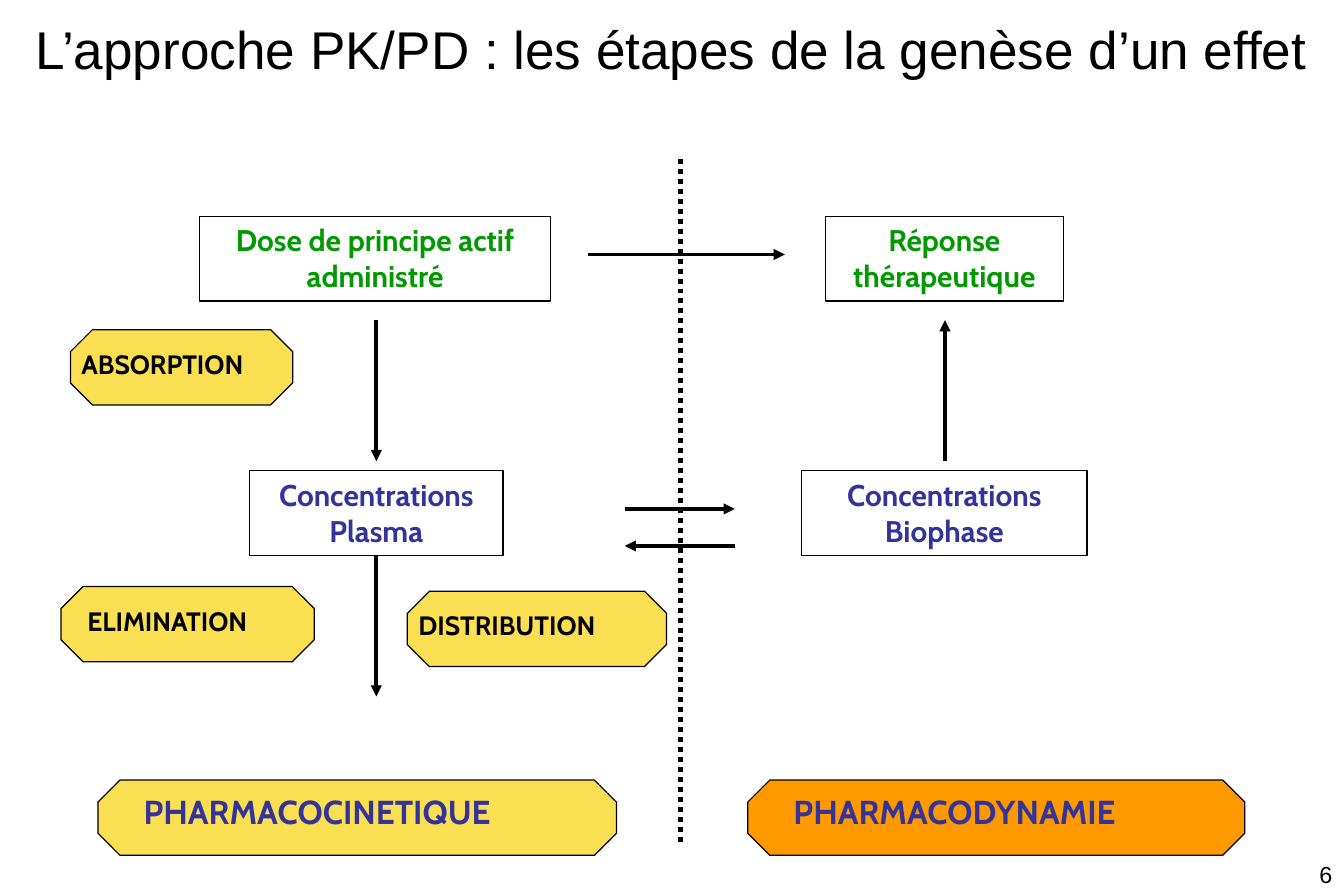
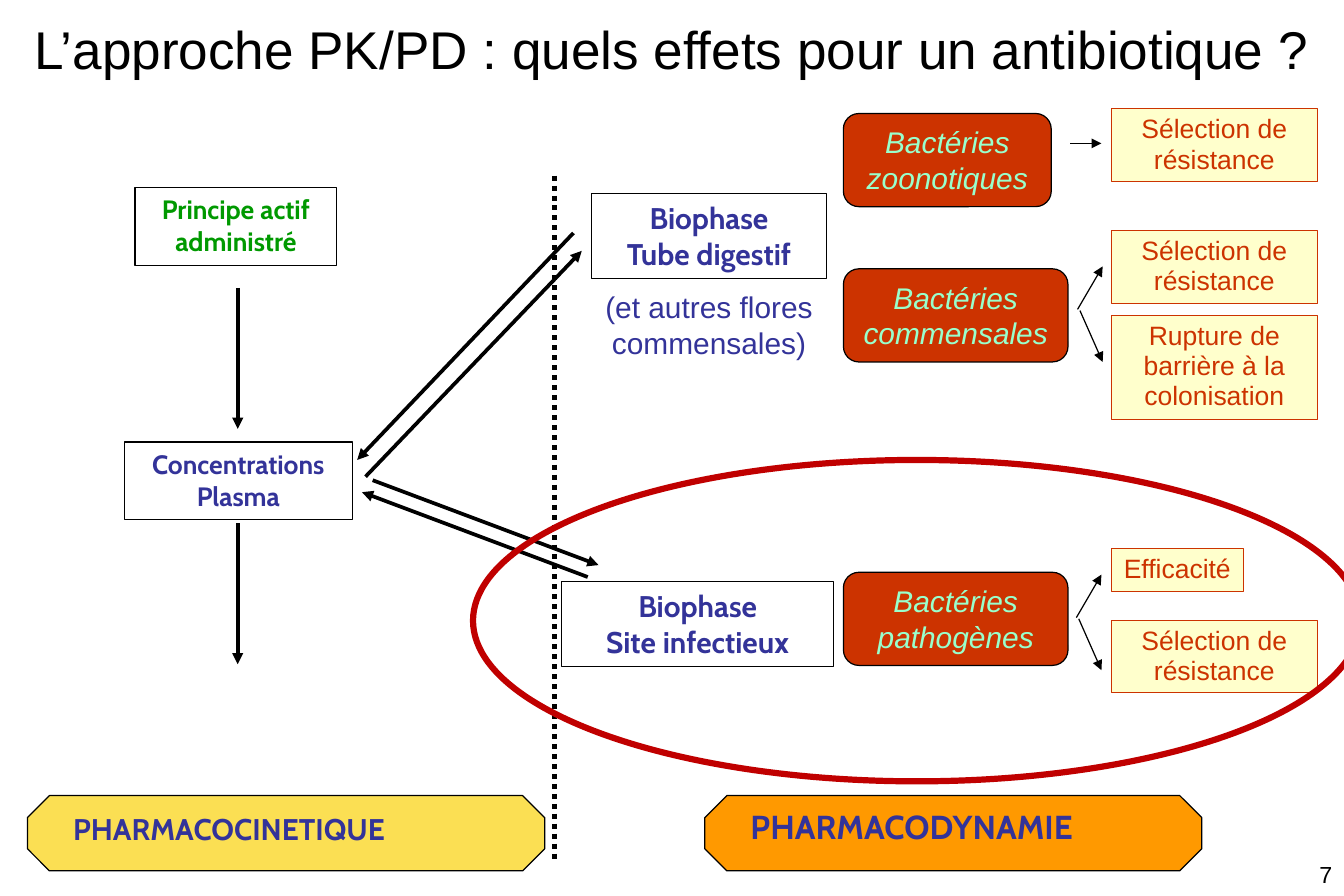
from pptx import Presentation
from pptx.dml.color import RGBColor
from pptx.enum.dml import MSO_LINE
from pptx.enum.shapes import MSO_CONNECTOR, MSO_SHAPE
from pptx.enum.text import MSO_ANCHOR, MSO_AUTO_SIZE, PP_ALIGN
from pptx.oxml.ns import qn
from pptx.util import Inches, Pt
from lxml import etree

W, H = 11.25, 7.5
BLACK, WHITE, BLUE, GREEN = "000000", "FFFFFF", "333399", "009900"
YELLOW, ORANGE, RED, DARK_RED = "FBDF53", "FF9900", "CC3300", "C00000"
TAG_H = 0.63                 # height of every octagon
DIVIDER_LEN = 5.75
RESULT_X, RESULT_W = 9.3, 1.73
BACTERIA_X = 7.06
THICK, THIN = 2.25, 0.75

# Text and shape styles
CABIN = dict(name="Cabin", bold=True)
ARIAL = dict(name="Arial")
STYLES = {
    "endpoint": dict(font={**CABIN, "size": 18}, color=GREEN),
    "site": dict(font={**CABIN, "size": 18}, color=BLUE, fill=WHITE),
    "note": dict(font={**ARIAL, "size": 18}, color=BLUE, line=None),
    "bacteria": dict(shape=MSO_SHAPE.ROUNDED_RECTANGLE, fill=RED,
                     font={**ARIAL, "size": 18, "italic": True}, color="99FFCC"),
    "result": dict(font={**ARIAL, "size": 16}, color=RED, fill="FFFFCC",
                   line=RED, weight=0.5, spacing=0.95),
    "step": dict(shape=MSO_SHAPE.OCTAGON, font={**CABIN, "size": 16},
                 color=BLACK, fill=YELLOW, align=PP_ALIGN.LEFT, top=0.06),
    "pk": dict(shape=MSO_SHAPE.OCTAGON, font={**CABIN, "size": 20}, color=BLUE,
               fill=YELLOW, align=PP_ALIGN.LEFT, side=0.29, top=0),
    "ring": dict(shape=MSO_SHAPE.OVAL, line=DARK_RED, weight=3.75),
}
STYLES["pd"] = {**STYLES["pk"], "fill": ORANGE}

# Content: boxes are (style, lines, left, top, width, height, overrides)
SMALL = dict(font={**CABIN, "size": 16})
SLIDES = [
    dict(
        title="L’approche PK/PD : les étapes de la genèse d’un effet",
        number="6", divider=(5.7, 1.33), plasma_exit=1.18,
        boxes=[
            ("pd", ["PHARMACODYNAMIE"], 6.26, 6.53, 4.16, TAG_H, {}),
            ("pk", ["PHARMACOCINETIQUE"], 0.82, 6.53, 4.34, TAG_H, {}),
            ("endpoint", ["Dose de principe actif", "administré"], 1.67, 1.81, 2.94, 0.71, {}),
            ("endpoint", ["Réponse", "thérapeutique"], 6.91, 1.81, 1.99, 0.71, {}),
            ("site", ["Concentrations", "Plasma"], 2.09, 3.94, 2.12, 0.71, {}),
            ("site", ["Concentrations", "Biophase"], 6.71, 3.94, 2.39, 0.71, {}),
            ("step", ["ABSORPTION"], 0.59, 2.76, 1.86, TAG_H, {}),
            ("step", ["ELIMINATION"], 0.51, 4.91, 2.12, TAG_H, dict(side=0.13)),
            ("step", ["DISTRIBUTION"], 3.41, 4.95, 2.17, TAG_H, {}),
        ],
        arrows=[
            (3.15, 2.68, 3.15, 3.86), (7.91, 3.86, 7.91, 2.68),
            (4.92, 2.13, 6.57, 2.13),
            (5.23, 4.26, 6.15, 4.26), (6.15, 4.57, 5.23, 4.57),
        ],
    ),
    dict(
        title="L’approche PK/PD : quels effets pour un antibiotique ?",
        number="7", divider=(4.64, 1.47),
        boxes=[
            ("pd", ["PHARMACODYNAMIE"], 5.9, 6.66, 4.16, TAG_H, {}),
            ("pk", ["PHARMACOCINETIQUE"], 0.23, 6.66, 4.33, TAG_H,
             dict(font={**CABIN, "size": 18}, top=0.03)),
            ("endpoint", ["Principe actif", "administré"], 1.13, 1.57, 1.69, 0.65, SMALL),
            ("site", ["Concentrations", "Plasma"], 1.04, 3.7, 1.91, 0.65, SMALL),
            ("site", ["Biophase", "Tube digestif"], 4.95, 1.62, 1.97, 0.71, {}),
            ("note", ["(et autres flores commensales)"], 4.95, 2.37, 1.97, 0.71, {}),
            ("site", ["Biophase", "Site infectieux"], 4.7, 4.87, 2.28, 0.71, {}),
            ("bacteria", ["Bactéries zoonotiques"], BACTERIA_X, 0.95, 1.74, 0.78, {}),
            ("bacteria", ["Bactéries commensales"], BACTERIA_X, 2.25, 1.88, 0.78, {}),
            ("bacteria", ["Bactéries pathogènes"], BACTERIA_X, 4.79, 1.88, 0.78, {}),
            ("result", ["Sélection de résistance"], RESULT_X, 0.91, RESULT_W, 0.61, {}),
            ("result", ["Sélection de résistance"], RESULT_X, 1.93, RESULT_W, 0.61, {}),
            ("result", ["Rupture de barrière à la colonisation"],
             RESULT_X, 2.64, RESULT_W, 0.87, {}),
            ("result", ["Efficacité"], RESULT_X, 4.59, 1.11, 0.36, {}),
            ("result", ["Sélection de résistance"], RESULT_X, 5.19, RESULT_W, 0.61, {}),
        ],
        arrows=[
            (1.99, 2.41, 1.99, 3.59), (1.99, 4.38, 1.99, 5.56),
            (3.06, 3.99, 4.87, 2.1), (4.8, 1.95, 2.99, 3.85),
            (3.12, 4.02, 5.01, 4.73), (4.92, 4.83, 3.03, 4.12),
        ],
        thin_arrows=[(8.96, 1.2, 9.22, 1.2)],
        forks=[(9.02, 2.59), (9.01, 5.17)],
        ring=(3.96, 3.85, 7.43, 2.69),
    ),
]


def rgb(value):
    return RGBColor.from_string(value)


def write(tf, lines, font, color, align=PP_ALIGN.CENTER, spacing=None):
    for i, line in enumerate(lines):
        p = tf.paragraphs[0] if i == 0 else tf.add_paragraph()
        p.alignment = align
        if spacing:
            p.line_spacing = spacing
        r = p.add_run()
        r.text = line
        for key, value in font.items():
            setattr(r.font, key, Pt(value) if key == "size" else value)
        r.font.color.rgb = rgb(color)


def add_box(s, style, lines, x, y, w, h, changes):
    st = {**STYLES[style], **changes}
    sp = s.shapes.add_shape(st.get("shape", MSO_SHAPE.RECTANGLE),
                            *map(Inches, (x, y, w, h)))
    sp.shadow.inherit = False
    if st.get("fill"):
        sp.fill.solid()
        sp.fill.fore_color.rgb = rgb(st["fill"])
    else:
        sp.fill.background()
    outline = st.get("line", BLACK)
    if outline:
        sp.line.color.rgb = rgb(outline)
        sp.line.width = Pt(st.get("weight", THIN))
    else:
        sp.line.fill.background()
    if lines:
        tf = sp.text_frame
        side = 0 if style == "step" else 0.05
        frame = dict(word_wrap=True, vertical_anchor=MSO_ANCHOR.TOP,
                     margin_left=Inches(st.get("side", side)), margin_right=0,
                     margin_top=Inches(st.get("top", 0.05)), margin_bottom=0)
        if st.get("align") is None:
            frame["margin_right"] = frame["margin_left"]
        for key, value in frame.items():
            setattr(tf, key, value)
        write(tf, lines, st["font"], st["color"],
              st.get("align", PP_ALIGN.CENTER), st.get("spacing"))
    return sp


def add_line(s, x1, y1, x2, y2, width=THICK, arrow=True):
    ln = s.shapes.add_connector(MSO_CONNECTOR.STRAIGHT,
                                *map(Inches, (x1, y1, x2, y2)))
    ln.line.color.rgb = rgb(BLACK)
    ln.line.width = Pt(width)
    sp_pr = ln.line._get_or_add_ln().getparent()
    etree.SubElement(sp_pr, qn("a:effectLst"))
    if arrow:
        etree.SubElement(sp_pr.find(qn("a:ln")), qn("a:tailEnd"), type="triangle")
    return ln


def add_fork(s, x, y):
    add_line(s, x, y, x + 0.21, y - 0.36, THIN)
    add_line(s, x + 0.02, y + 0.01, x + 0.21, y + 0.44, THIN)


def build(prs, layout, data):
    s = prs.slides.add_slide(layout)

    # Title and slide number
    tf = s.shapes.title.text_frame
    tf.auto_size = MSO_AUTO_SIZE.NONE
    write(tf, [data["title"]], {**ARIAL, "size": 32}, BLACK)
    num = s.shapes.add_textbox(*map(Inches, (W - 2.91, H - 0.35, 2.91, 0.35)))
    num.text_frame.word_wrap = True
    write(num.text_frame, [data["number"]], {**ARIAL, "size": 14}, BLACK, PP_ALIGN.RIGHT)

    # Divider between kinetics and dynamics
    x, y = data["divider"]
    add_line(s, x, y, x, y + DIVIDER_LEN, 3, arrow=False).line.dash_style = MSO_LINE.ROUND_DOT

    # Boxes, then arrows
    boxes = {tuple(b[1]): add_box(s, *b) for b in data["boxes"]}
    for arrow in data["arrows"]:
        add_line(s, *arrow)
    if "plasma_exit" in data:
        plasma = boxes["Concentrations", "Plasma"]
        x = (plasma.left + plasma.width / 2) / Inches(1)
        y = (plasma.top + plasma.height) / Inches(1)
        add_line(s, x, y, x, y + data["plasma_exit"]).begin_connect(plasma, 2)
    for arrow in data.get("thin_arrows", []):
        add_line(s, *arrow, THIN)
    for fork in data.get("forks", []):
        add_fork(s, *fork)
    if "ring" in data:
        add_box(s, "ring", [], *data["ring"], {})


def main():
    prs = Presentation()
    prs.slide_width, prs.slide_height = Inches(W), Inches(H)
    layout = prs.slide_layouts[5]

    # Title band shared by the slides
    title = layout.placeholders[0]
    for key, value in dict(left=0, top=0.04, width=W, height=0.73).items():
        setattr(title, key, Inches(value))
    title.text_frame.vertical_anchor = MSO_ANCHOR.MIDDLE

    for data in SLIDES:
        build(prs, layout, data)
    prs.save("out.pptx")


if __name__ == "__main__":
    main()
